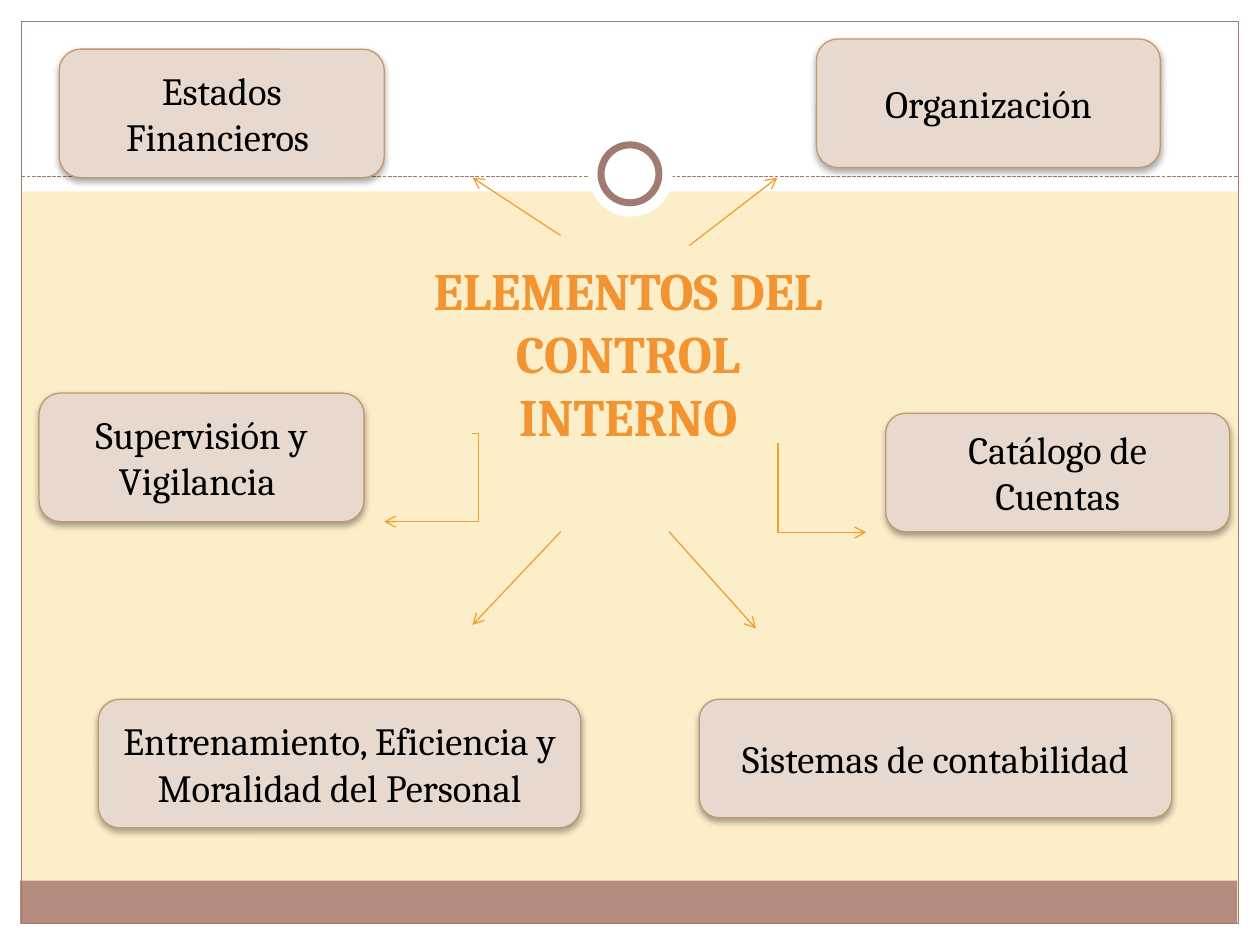
from lxml import etree
from pptx import Presentation, util as u
from pptx.dml.color import RGBColor
from pptx.enum import dml, shapes, text
from pptx.oxml.ns import qn

TITLE = ("ELEMENTOS DEL CONTROL INTERNO", (3.12, 3.05, 3.73, 0.55))
ELEMENTS = [
    ("Entrenamiento, Eficiencia y Moralidad del Personal", (0.78, 5.55, 3.83, 1.02)),
    ("Sistemas de contabilidad", (5.55, 5.55, 3.75, 0.94)),
    ("Catálogo de Cuentas", (7.03, 3.28, 2.73, 0.94)),
    ("Estados Financieros ", (0.47, 0.39, 2.58, 1.02)),
    ("Organización", (6.48, 0.31, 2.73, 1.02)),
    ("Supervisión y Vigilancia ", (0.31, 3.12, 2.58, 1.02)),
]
ARROWS = [
    (4.45, 4.22, 3.75, 4.96),
    (4.45, 1.87, 3.75, 1.41),
    (5.47, 1.95, 6.17, 1.41),
    (5.31, 4.22, 6, 4.99),
]
ELBOWS = [
    ((3.75, 3.44, 3.05, 4.14), -6900, 0),
    ((6.88, 3.52, 6.17, 4.22), 100300, 270),
]
THEME = {
    "font": "Cambria", "title_size": 30, "label_size": 22,
    "background": "FBEEC9", "white": "FFFFFF", "band": "B58B80", "frame": "A07B71",
    "title": "F19431", "label": "000000", "box": "E7D9CE", "box_line": "C3986D",
    "arrow": "F0A22E", "thin": 0.75, "ring": 4,
}
WIDTH, HEIGHT, MARGIN = 10, 7.5, 0.17
RECT, OVAL = shapes.MSO_SHAPE.RECTANGLE, shapes.MSO_SHAPE.OVAL
BACKDROP = [
    (RECT, (0, HEIGHT - MARGIN, WIDTH, MARGIN), "white", None, 0),
    (RECT, (0, 0, WIDTH, 1.52), "white", None, 0),
    (RECT, (0, 0, MARGIN, HEIGHT), "white", None, 0),
    (RECT, (WIDTH - MARGIN, 0, MARGIN, HEIGHT), "white", None, 0),
    (RECT, (0.16, 6.99, 9.66, 0.34), "band", None, 0),
    (RECT, (MARGIN, MARGIN, WIDTH - 2 * MARGIN, HEIGHT - 2 * MARGIN), None, "frame", "thin"),
]
MEDALLION = [
    (OVAL, (4.67, 1.05, 0.67, 0.67), "white", None, 0),
    (OVAL, (4.77, 1.15, 0.46, 0.46), "white", "frame", "ring"),
]


def color(name):
    return RGBColor.from_string(THEME[name])


def inches(values):
    return [u.Inches(value) for value in values]


def child(parent, tag, **attributes):
    return etree.SubElement(parent, qn(tag), attributes)


def add_panel(slide, kind, place, fill, line, weight):
    panel = slide.shapes.add_shape(kind, *inches(place))
    panel.shadow.inherit = False
    if fill:
        panel.fill.solid()
        panel.fill.fore_color.rgb = color(fill)
    else:
        panel.fill.background()
    if line:
        panel.line.color.rgb = color(line)
        panel.line.width = u.Pt(THEME[weight])
    else:
        panel.line.fill.background()
    return panel


def add_line(slide, kind, ends, ink):
    line = slide.shapes.add_connector(kind, *inches(ends))
    line.line.color.rgb = color(ink)
    line.line.width = u.Pt(THEME["thin"])
    child(line._element.spPr, "a:effectLst")
    return line


def add_arrow(slide, kind, ends):
    arrow = add_line(slide, kind, ends, "arrow")
    child(arrow.line._get_or_add_ln(), "a:tailEnd", type="arrow")
    return arrow


def write(frame, words, anchor, size, ink, bold):
    frame.text = words
    for name, value in {"word_wrap": True, "vertical_anchor": anchor,
                        "auto_size": text.MSO_AUTO_SIZE.NONE}.items():
        setattr(frame, name, value)
    paragraph = frame.paragraphs[0]
    paragraph.alignment = text.PP_ALIGN.CENTER
    font = paragraph.runs[0].font
    for name, value in {"name": THEME["font"], "size": u.Pt(THEME[size]), "bold": bold}.items():
        setattr(font, name, value)
    font.color.rgb = color(ink)


def add_element(slide, words, place):
    box = add_panel(slide, shapes.MSO_SHAPE.ROUNDED_RECTANGLE, place, "box", "box_line", "thin")
    write(box.text_frame, words, text.MSO_ANCHOR.MIDDLE, "label_size", "label", False)
    effects = box._element.spPr.find(qn("a:effectLst"))
    shadow = child(effects, "a:outerShdw", blurRad=str(u.Pt(4)), dist=str(u.Pt(2)),
                   dir="5400000", rotWithShape="0")
    child(child(shadow, "a:srgbClr", val="000000"), "a:alpha", val="35000")


def main():
    deck = Presentation()
    deck.slide_width, deck.slide_height = inches((WIDTH, HEIGHT))
    slide = deck.slides.add_slide(deck.slide_layouts[5])
    slide.background.fill.solid()
    slide.background.fill.fore_color.rgb = color("background")

    for panel in BACKDROP:
        add_panel(slide, *panel)
    divider = add_line(slide, shapes.MSO_CONNECTOR.STRAIGHT,
                       (MARGIN, 1.4, WIDTH - MARGIN, 1.4), "frame")
    divider.line.dash_style = dml.MSO_LINE.SQUARE_DOT
    for panel in MEDALLION:
        add_panel(slide, *panel)

    heading = slide.shapes.title
    words, place = TITLE
    for name, value in zip(("left", "top", "width", "height"), inches(place)):
        setattr(heading, name, value)
    write(heading.text_frame, words, text.MSO_ANCHOR.BOTTOM, "title_size", "title", True)
    slide.shapes._spTree.append(heading._element)

    for words, place in ELEMENTS:
        add_element(slide, words, place)
    for ends in ARROWS:
        add_arrow(slide, shapes.MSO_CONNECTOR.STRAIGHT, ends)
    for ends, bend, turn in ELBOWS:
        properties = add_arrow(slide, shapes.MSO_CONNECTOR.ELBOW, ends)._element.spPr
        properties.find(qn("a:xfrm")).set("rot", str(turn * 60000))
        guides = properties.find(qn("a:prstGeom")).find(qn("a:avLst"))
        child(guides, "a:gd", name="adj1", fmla=f"val {bend}")

    deck.save("out.pptx")


if __name__ == "__main__":
    main()
